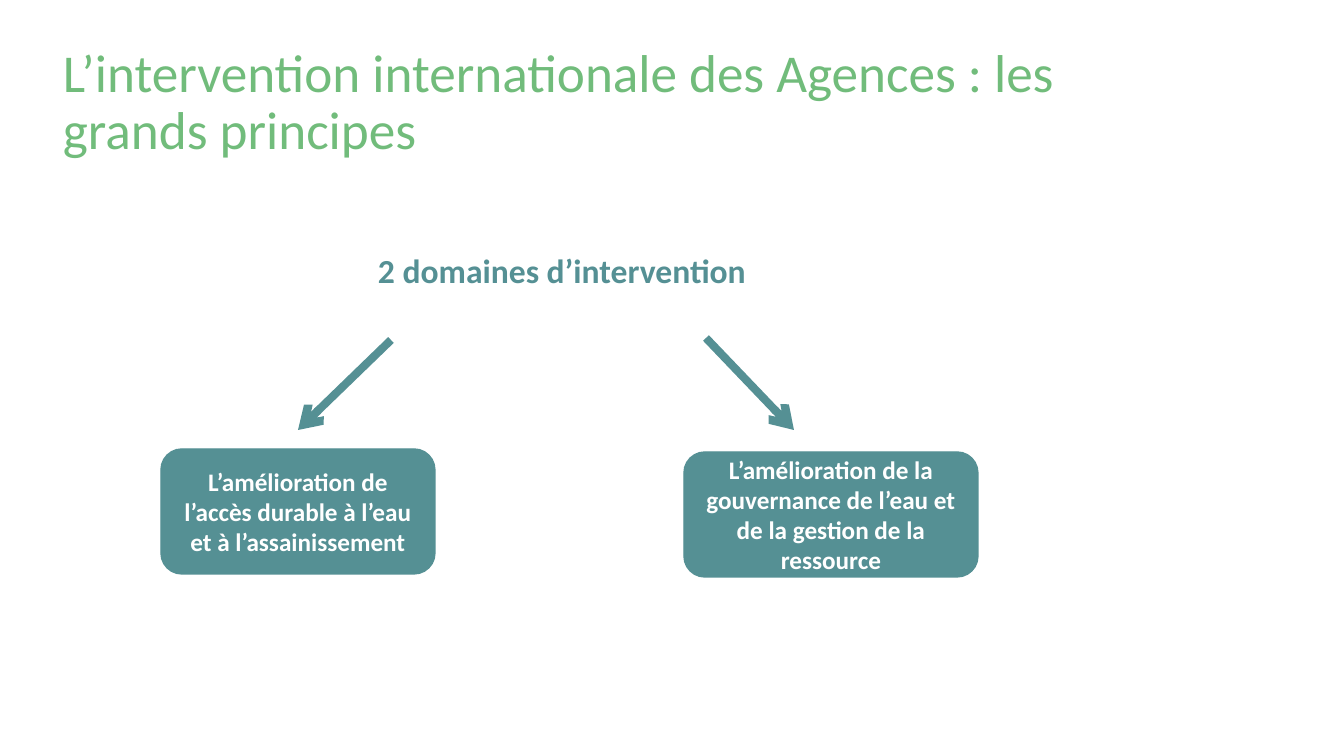
from pptx import Presentation
from pptx.dml.color import RGBColor
from pptx.enum.shapes import MSO_CONNECTOR as CONN, MSO_SHAPE as SHAPE
from pptx.enum.text import MSO_ANCHOR as ANCHOR, PP_ALIGN as ALIGN
from pptx.oxml.ns import qn
from pptx.util import Emu, Pt
from lxml.etree import SubElement

THEME = {
    "font": "Calibri",
    "green": RGBColor.from_string("71BC7B"),
    "teal": RGBColor.from_string("559094"),
    "white": RGBColor.from_string("FFFFFF"),
    "title": Pt(38),
    "heading": Pt(24),
    "label": Pt(18),
    "arrow": Pt(5.75),
    "border": Pt(1),
}


def px(*lengths):
    return [Emu(round(n * 914400 / 100.8)) for n in lengths]


def write(shape, text, size, color, bold=False, align=ALIGN.LEFT, anchor=ANCHOR.TOP, spacing=1.0):
    tf = shape.text_frame
    tf.word_wrap = True
    tf.vertical_anchor = anchor
    p = tf.paragraphs[0]
    p.text = text
    p.alignment = align
    p.line_spacing = spacing
    p.font.name = THEME["font"]
    p.font.size = THEME[size]
    p.font.bold = bold
    p.font.color.rgb = THEME[color]


prs = Presentation()
prs.slide_width, prs.slide_height = px(1344, 756)
s = prs.slides.add_slide(prs.slide_layouts[6])

title = s.shapes.add_textbox(*px(53, 53, 1057, 101))
write(title, "L’intervention internationale des Agences : les grands principes",
      "title", "green", anchor=ANCHOR.MIDDLE, spacing=0.9)

heading = s.shapes.add_textbox(*px(39, 221, 1046, 456))
write(heading, "2 domaines d’intervention", "heading", "teal",
      bold=True, align=ALIGN.CENTER, spacing=1.6)

domains = [
    ("L’amélioration de l’accès durable à l’eau et à l’assainissement",
     (161, 449, 274, 125), (391, 340, 298, 430)),
    ("L’amélioration de la gouvernance de l’eau et de la gestion de la ressource",
     (684, 452, 294, 125), (706, 338, 794, 430)),
]
for text, box, ends in domains:
    arrow = s.shapes.add_connector(CONN.STRAIGHT, *px(*ends))
    arrow.line.color.rgb = THEME["teal"]
    arrow.line.width = THEME["arrow"]
    SubElement(arrow.line._get_or_add_ln(), qn("a:tailEnd"), type="arrow")
    SubElement(arrow._element.spPr, qn("a:effectLst"))

    sp = s.shapes.add_shape(SHAPE.ROUNDED_RECTANGLE, *px(*box))
    sp.shadow.inherit = False
    sp.fill.solid()
    sp.fill.fore_color.rgb = THEME["teal"]
    sp.line.color.rgb = THEME["teal"]
    sp.line.width = THEME["border"]
    write(sp, text, "label", "white", bold=True, align=ALIGN.CENTER, anchor=ANCHOR.MIDDLE)

prs.save("out.pptx")
